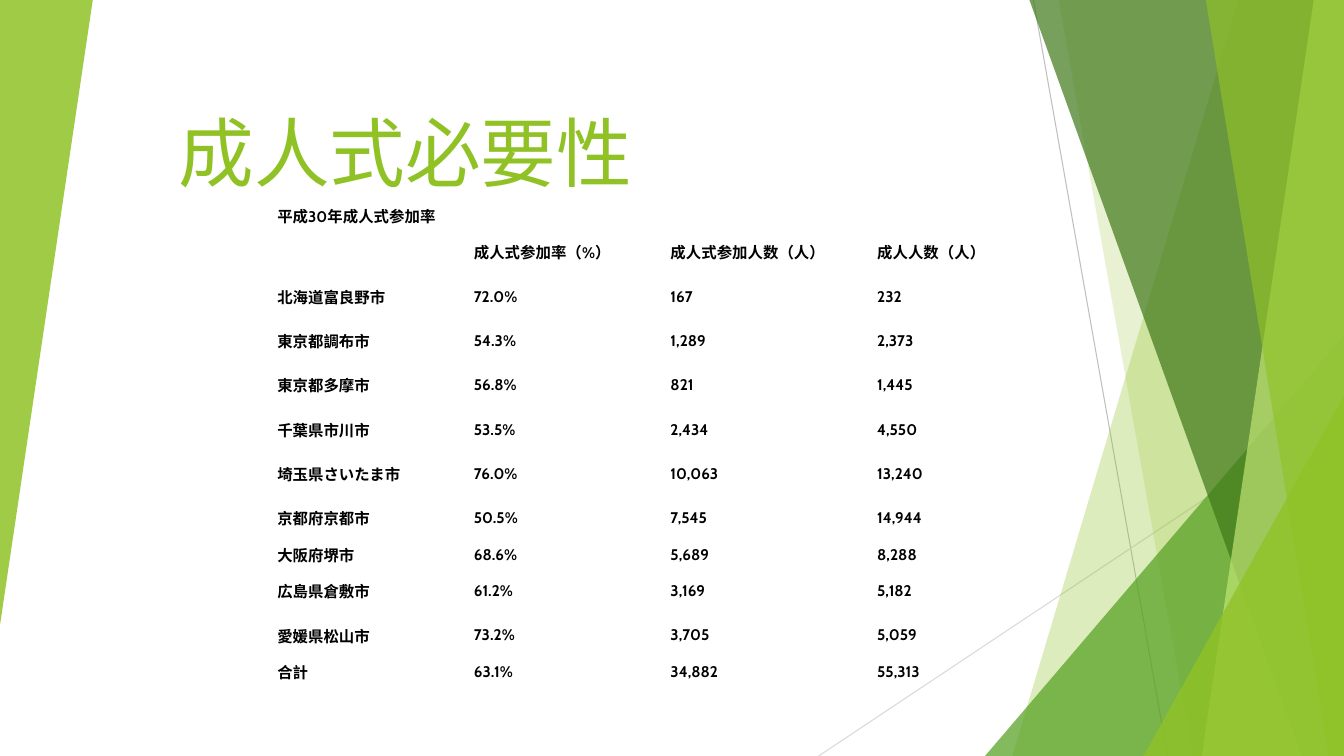
from dataclasses import dataclass

from lxml.etree import SubElement
from pptx import Presentation
from pptx.dml.color import RGBColor
from pptx.enum.shapes import MSO_CONNECTOR, MSO_SHAPE
from pptx.enum.text import MSO_ANCHOR, MSO_AUTO_SIZE, PP_ALIGN
from pptx.oxml.ns import qn
from pptx.shapes.autoshape import Shape
from pptx.slide import Slide
from pptx.table import _Cell as Cell
from pptx.util import Emu, Pt

PX = 9144  # EMU per px, 100 px to the inch
WIDTH, HEIGHT = 1333, 750


def px(length: int) -> Emu:
    return Emu(length * PX)


@dataclass(frozen=True)
class Theme:
    font: str = "Cabin"
    green: str = "90C226"
    leaf: str = "54A021"
    forest: str = "3F7819"
    lime: str = "C0E474"
    text: str = "000000"
    title_size: int = 54
    table_size: int = 11
    line_width: float = 0.75


@dataclass(frozen=True)
class Ray:
    start: tuple[int, int]
    end: tuple[int, int]
    color: str


@dataclass(frozen=True)
class Band:
    """Runs from the top to the right edge, down to the foot."""
    top_x: int
    foot_x: int
    color: str
    opacity: int


@dataclass(frozen=True)
class Wedge:
    left: int
    top: int
    width: int
    height: int
    color: str
    opacity: int
    rotation: int = 0


THEME = Theme()

RAYS = [
    Ray((1025, 0), (1158, HEIGHT), "BFBFBF"),
    Ray((WIDTH, 403), (812, HEIGHT), "D9D9D9"),
]

# Back to front
FACETS: list[Band | Wedge] = [
    Band(1228, 1004, THEME.green, 30),
    Band(1050, 1183, THEME.green, 20),
    Wedge(977, 333, 356, 417, THEME.leaf, 72),
    Band(1021, 1291, THEME.forest, 70),
    Band(1303, 1192, THEME.lime, 70),
    Band(1196, 1318, THEME.green, 65),
    Wedge(1134, 393, 199, 357, THEME.green, 80),
    Wedge(0, 0, 92, 620, THEME.green, 85, rotation=180),
]

COLUMN_WIDTHS = [195, 195, 205, 195]
TALL_ROW, SHORT_ROW = 44, 26
SHORT_ROWS = {0, 8, 11}
ATTENDANCE = [
    ("平成30年成人式参加率", "", "", ""),
    ("", "成人式参加率（%）", "成人式参加人数（人）", "成人人数（人）"),
    ("北海道富良野市", "72.0%", "167", "232"),
    ("東京都調布市", "54.3%", "1,289", "2,373"),
    ("東京都多摩市", "56.8%", "821", "1,445"),
    ("千葉県市川市", "53.5%", "2,434", "4,550"),
    ("埼玉県さいたま市", "76.0%", "10,063", "13,240"),
    ("京都府京都市", "50.5%", "7,545", "14,944"),
    ("大阪府堺市", "68.6%", "5,689", "8,288"),
    ("広島県倉敷市", "61.2%", "3,169", "5,182"),
    ("愛媛県松山市", "73.2%", "3,705", "5,059"),
    ("合計", "63.1%", "34,882", "55,313"),
]
NO_STYLE_NO_GRID = "{2D5ABB26-0587-4C30-8999-92F81FD0307C}"


def draw_ray(slide: Slide, ray: Ray) -> None:
    connector = slide.shapes.add_connector(
        MSO_CONNECTOR.STRAIGHT, *map(px, ray.start + ray.end))
    connector.line.color.rgb = RGBColor.from_string(ray.color)
    connector.line.width = Pt(THEME.line_width)
    SubElement(connector.element.spPr, qn("a:effectLst"))


def tint(shape: Shape, color: str, opacity: int) -> None:
    shape.shadow.inherit = False
    shape.line.fill.background()
    shape.fill.solid()
    shape.fill.fore_color.rgb = RGBColor.from_string(color)
    srgb = shape.element.spPr.find(f"{qn('a:solidFill')}/{qn('a:srgbClr')}")
    SubElement(srgb, qn("a:alpha"), val=str(opacity * 1000))


def draw_facet(slide: Slide, facet: Band | Wedge) -> None:
    if isinstance(facet, Band):
        outline = slide.shapes.build_freeform(facet.top_x, 0, scale=PX)
        outline.add_line_segments(
            [(WIDTH, 0), (WIDTH, HEIGHT), (facet.foot_x, HEIGHT)], close=True)
        shape = outline.convert_to_shape()
    else:
        shape = slide.shapes.add_shape(
            MSO_SHAPE.ISOSCELES_TRIANGLE,
            *map(px, (facet.left, facet.top, facet.width, facet.height)))
        shape.adjustments[0] = 1.0
        shape.rotation = facet.rotation
    tint(shape, facet.color, facet.opacity)


def write_title(slide: Slide, text: str) -> None:
    title = slide.shapes.title
    title.left, title.top, title.width, title.height = map(px, (167, 80, 940, 120))
    frame = title.text_frame
    frame.text = text
    frame.word_wrap = True
    frame.auto_size = MSO_AUTO_SIZE.NONE
    frame.vertical_anchor = MSO_ANCHOR.BOTTOM
    frame.paragraphs[0].alignment = PP_ALIGN.LEFT
    font = frame.paragraphs[0].runs[0].font
    font.name, font.size = THEME.font, Pt(THEME.title_size)
    font.color.rgb = RGBColor.from_string(THEME.green)
    # Bring the title in front of the facets
    title.element.getparent().append(title.element)


def fill_cell(cell: Cell, text: str) -> None:
    cell.fill.background()
    cell.vertical_anchor = MSO_ANCHOR.MIDDLE
    cell.margin_left = cell.margin_right = px(6)
    cell.margin_top = cell.margin_bottom = px(3)
    paragraph = cell.text_frame.paragraphs[0]
    if not text:
        # Keeps empty cells from stretching their row
        SubElement(paragraph._p, qn("a:endParaRPr"), sz=str(THEME.table_size * 100))
        return
    paragraph.text = text
    font = paragraph.runs[0].font
    font.name, font.size, font.bold = THEME.font, Pt(THEME.table_size), True
    font.color.rgb = RGBColor.from_string(THEME.text)


def draw_attendance(slide: Slide) -> None:
    row_heights = [SHORT_ROW if index in SHORT_ROWS else TALL_ROW
                   for index in range(len(ATTENDANCE))]
    frame = slide.shapes.add_table(
        len(ATTENDANCE), len(COLUMN_WIDTHS), px(269), px(200),
        px(sum(COLUMN_WIDTHS)), px(sum(row_heights)))
    table = frame.table
    table.first_row = table.horz_banding = False
    table._tbl.tblPr.find(qn("a:tableStyleId")).text = NO_STYLE_NO_GRID
    for column, width in zip(table.columns, COLUMN_WIDTHS):
        column.width = px(width)
    for row, height, texts in zip(table.rows, row_heights, ATTENDANCE):
        row.height = px(height)
        for cell, text in zip(row.cells, texts):
            fill_cell(cell, text)
    table.cell(0, 0).merge(table.cell(0, 1))


def main() -> None:
    presentation = Presentation()
    presentation.slide_width, presentation.slide_height = px(WIDTH), px(HEIGHT)
    slide = presentation.slides.add_slide(presentation.slide_layouts[5])

    # Backdrop
    for ray in RAYS:
        draw_ray(slide, ray)
    for facet in FACETS:
        draw_facet(slide, facet)

    # Content
    write_title(slide, "成人式必要性")
    draw_attendance(slide)
    presentation.save("out.pptx")


if __name__ == "__main__":
    main()
